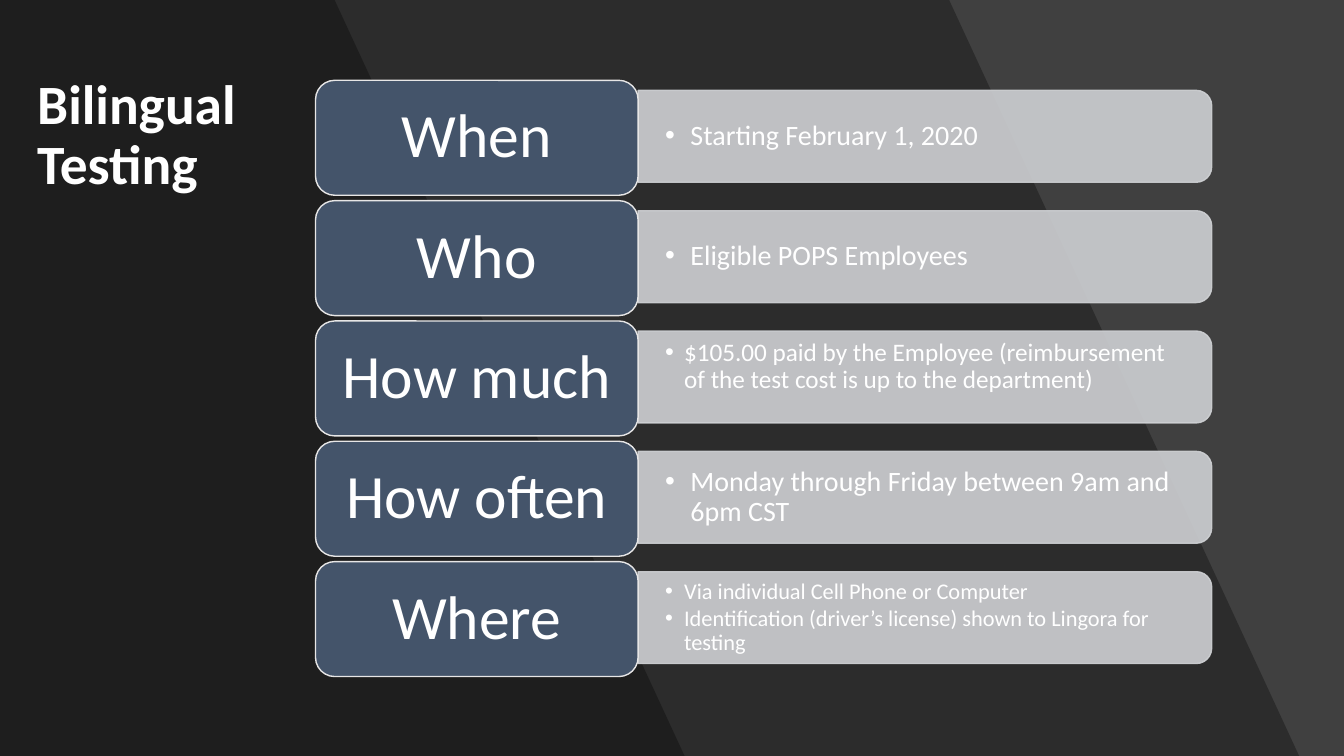
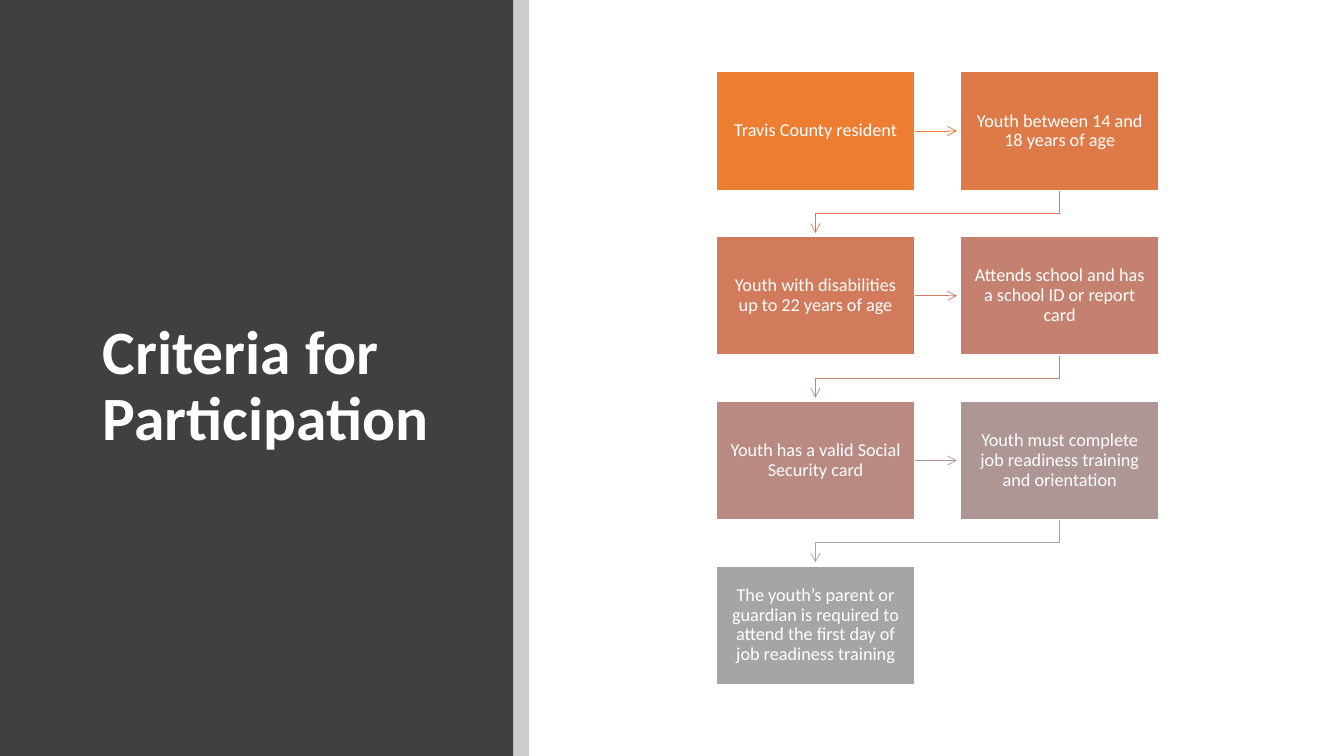
from dataclasses import dataclass

from pptx import Presentation
from pptx import util as u
from pptx.dml.color import RGBColor
from pptx.enum import shapes, text
from pptx.oxml.ns import qn
from lxml import etree

Pt = u.Pt
PRESET = shapes.MSO_SHAPE


@dataclass(frozen=True)
class Theme:
    font: str = "Calibri"
    white: str = "FFFFFF"
    black: str = "000000"
    charcoal: str = "404040"
    slate: str = "44546A"
    label_edge: str = "E7E6E6"
    panel: str = "CFD1D4"
    title_small: float = 39.6
    title_large: float = 44
    label_size: float = 44
    step_size: float = 13
    line_spacing: float = 0.9


@dataclass(frozen=True)
class Box:
    """A rectangle in points."""
    x: float
    y: float
    w: float
    h: float

    @property
    def right(self):
        return self.x + self.w

    @property
    def bottom(self):
        return self.y + self.h

    @property
    def center_x(self):
        return self.x + self.w / 2

    @property
    def center_y(self):
        return self.y + self.h / 2

    def emu(self):
        return Pt(self.x), Pt(self.y), Pt(self.w), Pt(self.h)


THEME = Theme()
SLIDE = Box(0, 0, 960, 540)

# label, list size, list indent, upward shift of the list, list items
TESTING_ROWS = [
    ("When", 20, 18, 0, ["Starting February 1, 2020"]),
    ("Who", 20, 18, 0, ["Eligible POPS Employees"]),
    ("How much", 18, 13.5, 7,
     ["$105.00 paid by the Employee (reimbursement of the test cost is up to the department)"]),
    ("How often", 20, 18, 0, ["Monday through Friday between 9am and 6pm CST"]),
    ("Where", 16, 13.5, 0,
     ["Via individual Cell Phone or Computer",
      "Identification (driver’s license) shown to Lingora for testing"]),
]

# text, box colour, colour of the arrow to the next step
CRITERIA = [
    ("Travis County resident", "ED7D31", "ED7D31"),
    ("Youth between 14 and 18 years of age", "DE7A47", "DC7A4B"),
    ("Youth with disabilities up to 22 years of age", "D17B5C", "CC7D64"),
    ("Attends school and has a school ID or report card", "C48170", "BD867B"),
    ("Youth has a valid Social Security card", "B98A82", "B09391"),
    ("Youth must complete job readiness training and orientation", "AE9694", "A5A5A5"),
    ("The youth’s parent or guardian is required to attend the first day of job readiness training",
     "A5A5A5", None),
]


def rgb(color):
    return RGBColor.from_string(color)


def paint(shape, fill, edge=None, opacity=100):
    shape.shadow.inherit = False
    shape.fill.solid()
    shape.fill.fore_color.rgb = rgb(fill)
    if edge:
        shape.line.color.rgb = rgb(edge)
        shape.line.width = Pt(1)
    else:
        shape.line.fill.background()
    if opacity < 100:
        for color in shape.element.spPr.iter(qn("a:srgbClr")):
            etree.SubElement(color, qn("a:alpha"), val=str(opacity * 1000))


def add_block(page, box, fill, edge=None, opacity=100, preset=PRESET.RECTANGLE):
    block = page.shapes.add_shape(preset, *box.emu())
    paint(block, fill, edge, opacity)
    return block


def add_outline(page, points):
    start, *rest = [(Pt(x), Pt(y)) for x, y in points]
    return page.shapes.build_freeform(*start), rest


def add_wedge(page, box, top_right):
    """Darken the left of the box up to a slanted edge."""
    builder, rest = add_outline(page, [
        (box.x, box.y), (top_right, box.y), (box.right, box.bottom), (box.x, box.bottom)])
    builder.add_line_segments(rest, close=True)
    paint(builder.convert_to_shape(), THEME.black, opacity=30)


def set_frame(shape, side, edge):
    frame = shape.text_frame
    frame.word_wrap = True
    frame.auto_size = text.MSO_AUTO_SIZE.NONE
    frame.vertical_anchor = text.MSO_ANCHOR.MIDDLE
    frame.margin_left = frame.margin_right = Pt(side)
    frame.margin_top = frame.margin_bottom = Pt(edge)
    return frame


def write(para, words, size, align=text.PP_ALIGN.LEFT, bold=False):
    para.alignment = align
    para.line_spacing = THEME.line_spacing
    span = para.add_run()
    span.text = words
    span.font.name = THEME.font
    span.font.size = Pt(size)
    span.font.bold = bold
    span.font.color.rgb = rgb(THEME.white)


def write_centered(shape, words, size, side, edge):
    frame = set_frame(shape, side, edge)
    write(frame.paragraphs[0], words, size, text.PP_ALIGN.CENTER)


def write_list(page, box, items, size, indent):
    frame = set_frame(page.shapes.add_textbox(*box.emu()), 19.4, 2)
    for index, item in enumerate(items):
        para = frame.add_paragraph() if index else frame.paragraphs[0]
        write(para, item, size)
        para.space_after = Pt(size * 0.15)
        props = para._p.get_or_add_pPr()
        props.set("marL", str(Pt(indent)))
        props.set("indent", str(-Pt(indent)))
        etree.SubElement(props, qn("a:buFont"), typeface="Arial")
        etree.SubElement(props, qn("a:buChar"), char="•")


def place_title(page, box, words, size):
    """Fill the title placeholder and bring it in front of the bands."""
    title = page.shapes.title
    title.left, title.top, title.width, title.height = box.emu()
    write(set_frame(title, 7.2, 3.6).paragraphs[0], words, size, bold=True)
    title.element.getparent().append(title.element)


def style_arrow(arrow, color):
    arrow.line.color.rgb = rgb(color)
    arrow.line.width = Pt(0.5)
    props = arrow.element.spPr
    etree.SubElement(props.find(qn("a:ln")), qn("a:tailEnd"), type="arrow")
    if props.find(qn("a:effectLst")) is None:
        etree.SubElement(props, qn("a:effectLst"))


def add_step_arrow(page, start, end, color, clearance=2.5):
    """Join two steps: straight along a row, bent down to the next row."""
    if start.y == end.y:
        arrow = page.shapes.add_connector(
            shapes.MSO_CONNECTOR.STRAIGHT, Pt(start.right), Pt(start.center_y),
            Pt(end.x - clearance), Pt(end.center_y))
    else:
        turn = (start.bottom + end.y) / 2
        builder, rest = add_outline(page, [
            (start.center_x, start.bottom), (start.center_x, turn),
            (end.center_x, turn), (end.center_x, end.y - clearance)])
        builder.add_line_segments(rest, close=False)
        arrow = builder.convert_to_shape()
        arrow.fill.background()
    style_arrow(arrow, color)


def add_testing_row(page, box, label, size, indent, shift, items):
    label_box = Box(box.x, box.y, 230.4, box.h)
    panel = Box(label_box.right, box.y + 7.2, box.right - label_box.right, 65.6)
    # The preset rounds its top corners, so a quarter turn rounds the right ones.
    upright = Box(panel.center_x - panel.h / 2, panel.center_y - panel.w / 2, panel.h, panel.w)
    band = add_block(page, upright, THEME.panel, THEME.panel, 90,
                     PRESET.ROUND_2_SAME_RECTANGLE)
    band.rotation = 90
    write_list(page, Box(panel.x, panel.y + 3.2 - shift, panel.w - 3.6, 59.2),
               items, size, indent)
    name = add_block(page, label_box, THEME.slate, THEME.label_edge,
                     preset=PRESET.ROUNDED_RECTANGLE)
    write_centered(name, label, THEME.label_size, 13, 6.5)


def add_testing_table(page, box, rows):
    height = 82.1
    pitch = (box.h - height) / (len(rows) - 1)
    for index, row in enumerate(rows):
        add_testing_row(page, Box(box.x, box.y + index * pitch, box.w, height), *row)


def add_step_flow(page, box, steps, columns=2):
    width, height = 141.8, 84.8
    row_count = -(-len(steps) // columns)
    across = (box.w - width) / (columns - 1)
    down = (box.h - height) / (row_count - 1)
    cells = [Box(box.x + index % columns * across, box.y + index // columns * down,
                 width, height) for index in range(len(steps))]
    for index, (words, fill, arrow_color) in enumerate(steps):
        if arrow_color:
            add_step_arrow(page, cells[index], cells[index + 1], arrow_color)
        step = add_block(page, cells[index], fill, THEME.white)
        write_centered(step, words, THEME.step_size, 7.2, 7.2)


def add_page(deck, background):
    page = deck.slides.add_slide(deck.slide_layouts.get_by_name("Title Only"))
    page.background.fill.solid()
    page.background.fill.fore_color.rgb = rgb(background)
    return page


def build_testing_page(deck):
    page = add_page(deck, THEME.charcoal)
    add_wedge(page, Box(0, 0, 928, SLIDE.h), 678)
    add_wedge(page, Box(0, 0, 489, SLIDE.h), 239)
    place_title(page, Box(19.4, 53.3, 200.2, 88.6), "Bilingual Testing", THEME.title_small)
    add_testing_table(page, Box(225.4, 57.4, 640.1, 425.9), TESTING_ROWS)


def build_criteria_page(deck):
    page = add_page(deck, THEME.white)
    side = Box(0, 0, 366.5, SLIDE.h)
    add_block(page, side, THEME.charcoal)
    add_block(page, Box(side.right, 0, 11.5, SLIDE.h), THEME.black, opacity=20)
    place_title(page, Box(66.2, 64.1, 262.8, 425.5), "Criteria for Participation",
                THEME.title_large)
    add_step_flow(page, Box(511.6, 51.2, 316.2, 437.8), CRITERIA)


def main():
    deck = Presentation()
    deck.slide_width, deck.slide_height = Pt(SLIDE.w), Pt(SLIDE.h)
    build_testing_page(deck)
    build_criteria_page(deck)
    deck.save("out.pptx")


if __name__ == "__main__":
    main()
